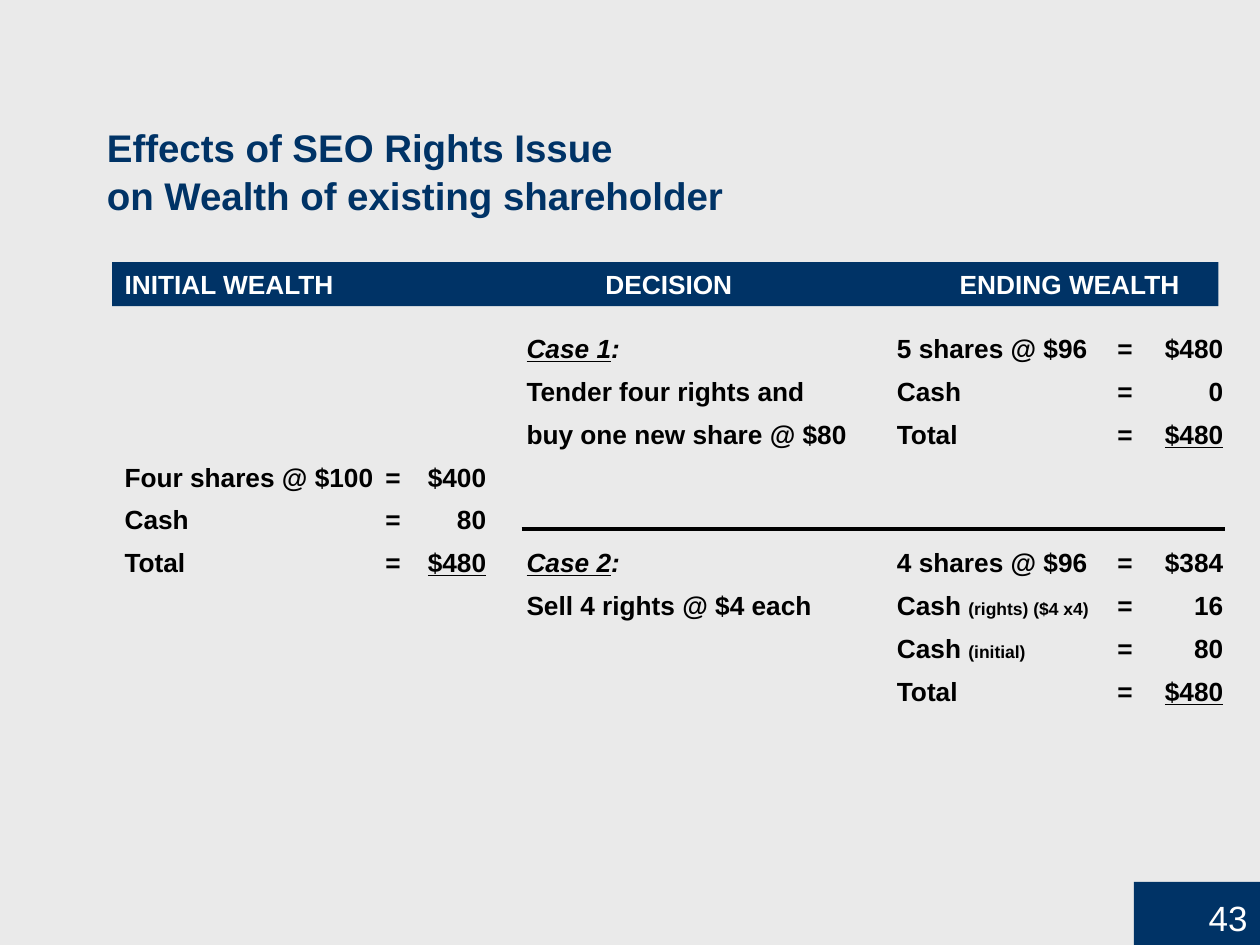
from lxml.etree import SubElement
from pptx import Presentation
from pptx.dml.color import RGBColor
from pptx.enum.shapes import MSO_CONNECTOR, MSO_SHAPE
from pptx.enum.text import MSO_ANCHOR, PP_ALIGN
from pptx.oxml.ns import qn
from pptx.util import Inches, Pt

HUES = {"back": "EAEAEA", "navy": "003366", "white": "FFFFFF", "black": "000000"}
COLS, ROWS = 100, 75
HEAD_TABS = [(43.2, "ctr"), (75, "ctr")]
BODY_TABS = [(21.3, "ctr"), (28.7, "r"), (31.9, "l"),
             (61.3, "l"), (79.4, "ctr"), (87.2, "r")]
BODY = [
    [("\t\t\t", ""), ("Case 1", "iu"), (":", "i"), ("\t5 shares @ $96\t=\t$480", "")],
    [("\t\t\tTender four rights and\tCash\t=\t0", "")],
    [("\t\t\tbuy one new share @ $80\tTotal\t=\t", ""), ("$480", "u")],
    [("Four shares @ $100\t=\t$400", "")],
    [("Cash\t=\t80", "")],
    [("Total\t=\t", ""), ("$480", "u"), ("\t", ""), ("Case 2", "iu"), (":", "i"),
     ("\t4 shares @ $96\t=\t$384", "")],
    [("\t\t\tSell 4 rights @ $4 each\tCash ", ""), ("(rights) ($4 x4)", "s"),
     ("\t=\t16", "")],
    [("\t\t\t\tCash ", ""), ("(initial)", "s"), ("\t=\t80", "")],
    [("\t\t\t\tTotal\t=\t", ""), ("$480", "u")],
]


class Deck:
    def __init__(self):
        self.show = Presentation()
        self.show.slide_width, self.show.slide_height = Inches(10), Inches(7.5)
        self.slide = self.show.slides.add_slide(self.show.slide_layouts[6])
        self.paint(self.slide.background.fill, "back")

    def paint(self, fill, hue):
        fill.solid()
        fill.fore_color.rgb = RGBColor.from_string(HUES[hue])

    def grid(self, *cells):
        sides = (self.show.slide_width / COLS, self.show.slide_height / ROWS)
        return [round(cell * sides[i % 2]) for i, cell in enumerate(cells)]

    def font(self, run, size, hue, bold=True):
        run.font.name, run.font.size, run.font.bold = "Arial", Pt(size), bold
        run.font.color.rgb = RGBColor.from_string(HUES[hue])

    def tabs(self, para, stops):
        props = para._p.get_or_add_pPr()
        stop_list = SubElement(props, qn("a:tabLst"))
        for col, side in stops:
            SubElement(stop_list, qn("a:tab"), pos=str(self.grid(col)[0]), algn=side)

    def label(self, shape, text, size, hue, bold=True):
        frame = shape.text_frame
        frame.word_wrap = True
        frame.vertical_anchor = MSO_ANCHOR.TOP
        para = frame.paragraphs[0]
        para.text = text
        para.alignment = PP_ALIGN.LEFT
        for run in para.runs:
            self.font(run, size, hue, bold)
        return para

    def bar(self, cells, text, size, bold):
        shape = self.slide.shapes.add_shape(MSO_SHAPE.RECTANGLE, *self.grid(*cells))
        shape.shadow.inherit = False
        self.paint(shape.fill, "navy")
        shape.line.fill.background()
        return shape, self.label(shape, text, size, "white", bold)

    def title(self, cells, text):
        box = self.slide.shapes.add_textbox(*self.grid(*cells))
        self.label(box, text, 22, "navy").line_spacing = 1.06

    def body(self, cells, rows):
        frame = self.slide.shapes.add_textbox(*self.grid(*cells)).text_frame
        frame.word_wrap = True
        for i, parts in enumerate(rows):
            para = frame.add_paragraph() if i else frame.paragraphs[0]
            para.line_spacing = 1.36
            self.tabs(para, BODY_TABS)
            for text, style in parts:
                run = para.add_run()
                run.text = text
                self.font(run, 10 if "s" in style else 15, "black")
                run.font.italic, run.font.underline = "i" in style, "u" in style

    def rule(self, cells, width):
        line = self.slide.shapes.add_connector(MSO_CONNECTOR.STRAIGHT, *self.grid(*cells))
        self.paint(line.line.fill, "black")
        line.line.width = Pt(width)
        SubElement(line._element.spPr, qn("a:effectLst"))


def main():
    deck = Deck()
    page, para = deck.bar((90, 70, 10, 5), "43", 20, False)
    page.text_frame.vertical_anchor = MSO_ANCHOR.BOTTOM
    para.alignment = PP_ALIGN.RIGHT
    deck.title((7.5, 9.1, 87.5, 8.3),
               "Effects of SEO Rights Issue\von Wealth of existing shareholder")
    head, para = deck.bar((8.9, 20.8, 87.8, 3.5),
                          "INITIAL WEALTH\tDECISION\tENDING WEALTH", 15, True)
    deck.tabs(para, HEAD_TABS)
    deck.body((8.9, 25, 89.2, 30.5), BODY)
    deck.rule((41.4, 42, 97.2, 42), 2.25)
    deck.show.save("out.pptx")


if __name__ == "__main__":
    main()
